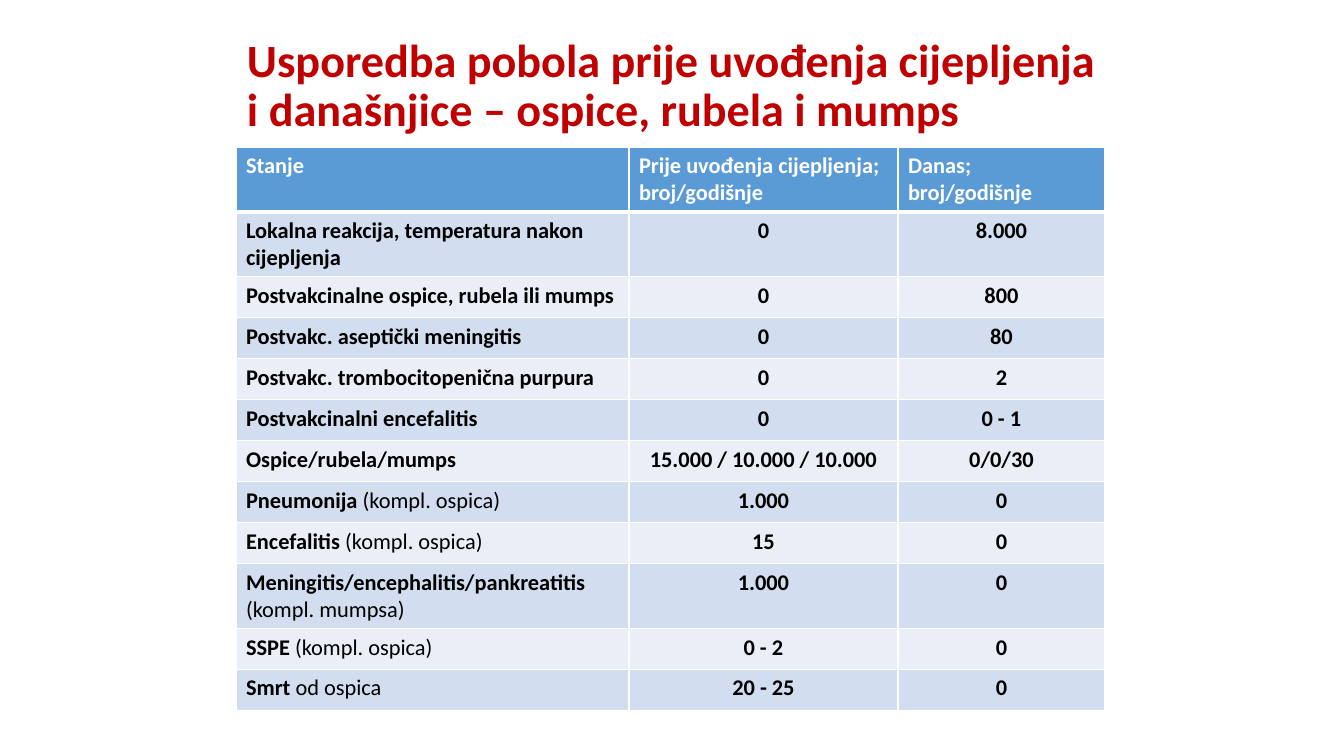
from lxml.etree import SubElement
from pptx import Presentation
from pptx.dml.color import RGBColor
from pptx.enum.text import MSO_ANCHOR, MSO_AUTO_SIZE, PP_ALIGN
from pptx.oxml.ns import qn
from pptx.util import Pt

TITLE = "Usporedba pobola prije uvođenja cijepljenja i današnjice – ospice, rubela i mumps"
HEADER = ("Stanje", "Prije uvođenja cijepljenja; broj/godišnje", "Danas; broj/godišnje")
# Condition, plain-weight remark, before vaccination, today
CONDITIONS = [
    ("Lokalna reakcija, temperatura nakon cijepljenja", "", "0", "8.000"),
    ("Postvakcinalne ospice, rubela ili mumps", "", "0", "800"),
    ("Postvakc. aseptički meningitis", "", "0", "80"),
    ("Postvakc. trombocitopenična purpura", "", "0", "2"),
    ("Postvakcinalni encefalitis", "", "0", "0 - 1"),
    ("Ospice/rubela/mumps", "", "15.000 / 10.000 / 10.000", "0/0/30"),
    ("Pneumonija ", "(kompl. ospica)", "1.000", "0"),
    ("Encefalitis ", "(kompl. ospica)", "15", "0"),
    ("Meningitis/encephalitis/pankreatitis ", "(kompl. mumpsa)", "1.000", "0"),
    ("SSPE ", "(kompl. ospica)", "0 - 2", "0"),
    ("Smrt ", "od ospica", "20 - 25", "0"),
]

RED = RGBColor(0xC0, 0x00, 0x00)
WHITE = RGBColor(0xFF, 0xFF, 0xFF)
BLACK = RGBColor(0x00, 0x00, 0x00)
BLUE = RGBColor(0x5B, 0x9B, 0xD5)
BANDS = (RGBColor(0xD2, 0xDE, 0xEF), RGBColor(0xEA, 0xEF, 0xF7))

FONT = "Calibri"
COL_WIDTHS = (393, 269, 207)
ONE_LINE, TWO_LINES = 41, 64
TWO_LINE_ROWS = (0, 1, 9)


def px(n):
    return round(n * 914400 / 100.8)


def write(tf, text, remark="", size=16, color=BLACK, align=PP_ALIGN.LEFT):
    """Fill the first paragraph with bold text and an optional plain remark."""
    p = tf.paragraphs[0]
    p.alignment = align
    for part, bold in ((text, True), (remark, False)):
        if part:
            r = p.add_run()
            r.text = part
            r.font.name = FONT
            r.font.size = Pt(size)
            r.font.bold = bold
            r.font.color.rgb = color
    return p


def set_borders(cell, top=1, bottom=1):
    """Draw white cell borders; widths are in points."""
    tc_pr = cell._tc.get_or_add_tcPr()
    for side, width in (("L", 1), ("R", 1), ("T", top), ("B", bottom)):
        ln = SubElement(tc_pr, qn(f"a:ln{side}"), w=str(Pt(width)))
        fill = SubElement(ln, qn("a:solidFill"))
        SubElement(fill, qn("a:srgbClr"), val=str(WHITE))


def add_title(slide):
    title = slide.shapes.title
    title.left, title.top, title.width, title.height = map(px, (237, 40, 869, 94))
    tf = title.text_frame
    tf.word_wrap = True
    tf.auto_size = MSO_AUTO_SIZE.NONE
    tf.vertical_anchor = MSO_ANCHOR.MIDDLE
    tf.margin_left, tf.margin_right = px(10), 0
    write(tf, TITLE, size=33, color=RED).line_spacing = 0.9


def add_comparison(slide):
    rows = [(HEADER[0], "", *HEADER[1:])] + CONDITIONS
    heights = [TWO_LINES if i in TWO_LINE_ROWS else ONE_LINE for i in range(len(rows))]
    table = slide.shapes.add_table(len(rows), len(COL_WIDTHS), px(236), px(147),
                                   px(sum(COL_WIDTHS)), px(sum(heights))).table
    for col, width in zip(table.columns, COL_WIDTHS):
        col.width = px(width)
    for i, (condition, remark, before, today) in enumerate(rows):
        table.rows[i].height = px(heights[i])
        is_header = i == 0
        for j, text in enumerate((condition, before, today)):
            cell = table.cell(i, j)
            set_borders(cell, top=3 if i == 1 else 1, bottom=3 if is_header else 1)
            cell.fill.solid()
            cell.fill.fore_color.rgb = BLUE if is_header else BANDS[(i - 1) % 2]
            write(cell.text_frame, text, remark if j == 0 else "",
                  color=WHITE if is_header else BLACK,
                  align=PP_ALIGN.LEFT if is_header or j == 0 else PP_ALIGN.CENTER)


def main():
    prs = Presentation()
    prs.slide_width, prs.slide_height = px(1344), px(756)
    slide = prs.slides.add_slide(prs.slide_layouts[5])
    add_title(slide)
    add_comparison(slide)
    prs.save("out.pptx")


if __name__ == "__main__":
    main()
